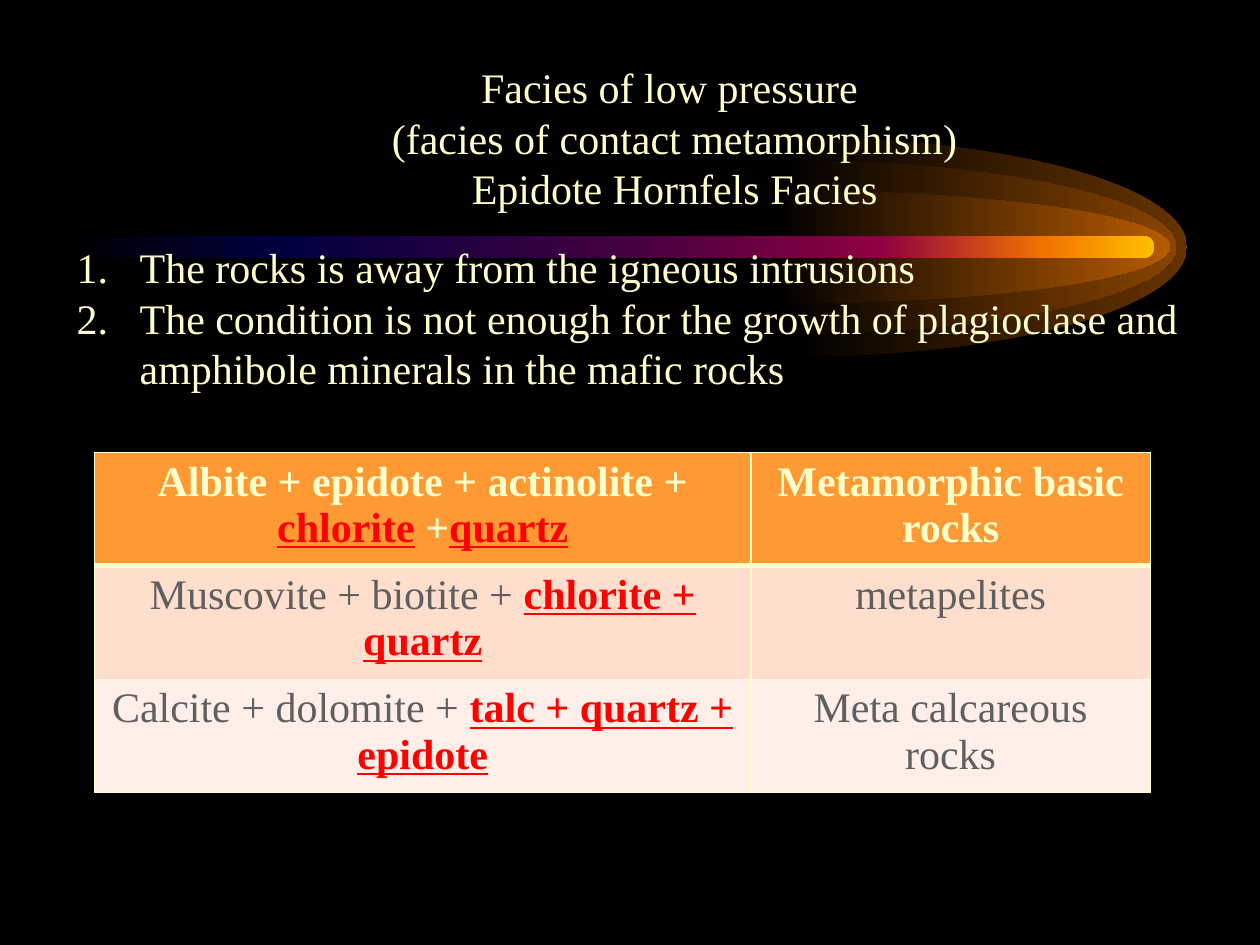
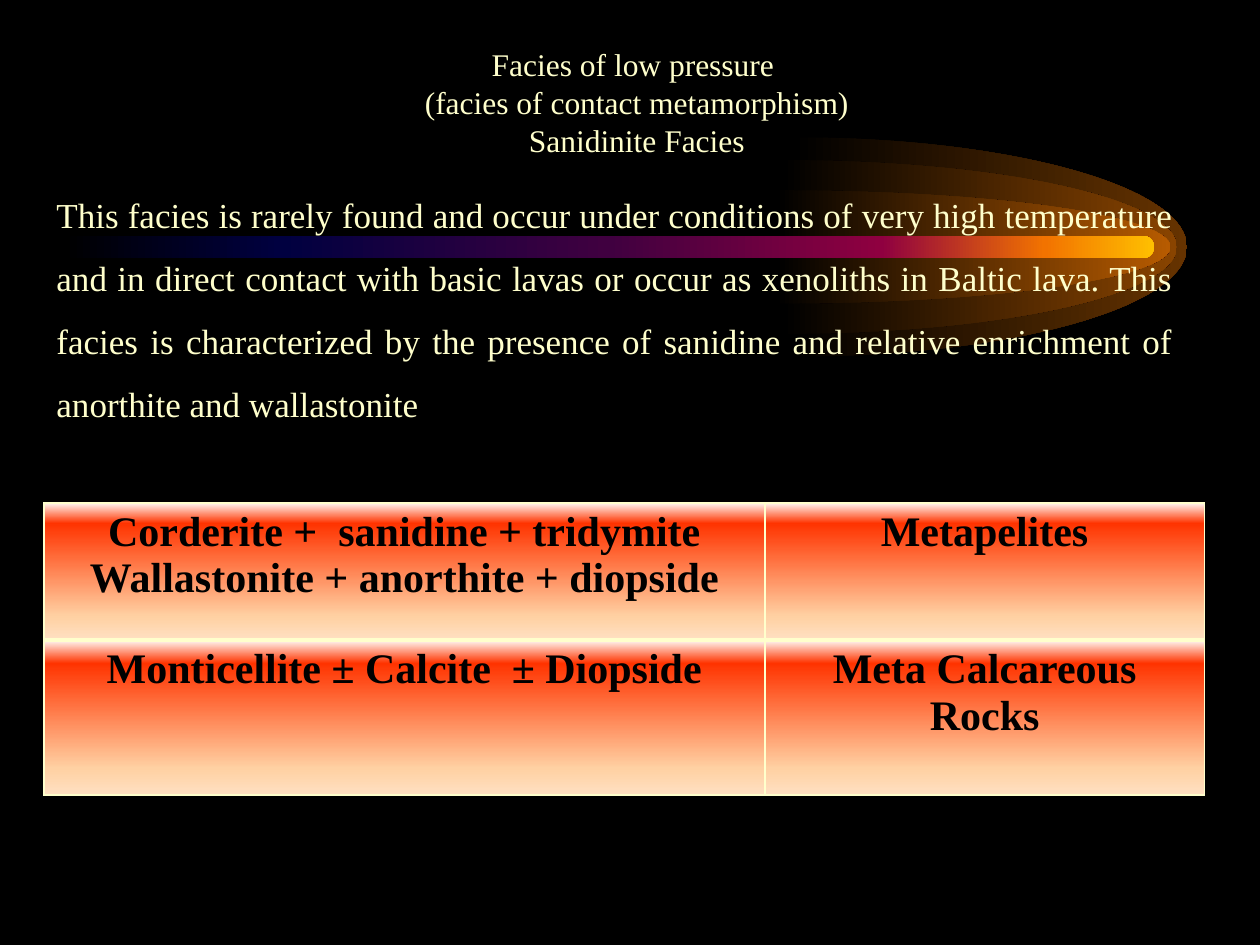
"""Build two slides on low-pressure metamorphic facies."""
import dataclasses

import pptx
import pptx.dml.color
import pptx.enum.shapes
import pptx.enum.text
import pptx.oxml.ns
import pptx.util
from lxml import etree

ALIGN = pptx.enum.text.PP_ALIGN
qn = pptx.oxml.ns.qn


@dataclasses.dataclass(frozen=True)
class Theme:
    font: str = "Times New Roman"
    large: int = 24
    medium: int = 20
    small: int = 18
    back: str = "000000"
    cream: str = "FFFFCC"
    dark: str = "000000"
    grey: str = "5F5F5F"
    accent: str = "FF0000"
    header: str = "FF9933"
    bands: tuple = ("FFDECE", "FFEFE8")
    bar: tuple = ((0, "000000"), (20, "000040"), (50, "400040"),
                  (75, "8F0040"), (90, "F27300"), (100, "FFBF00"))
    fire: tuple = ((0, "FFFAF5"), (15, "FF3300"), (83, "FFD1A3"), (100, "FFE0C2"))
    halos: tuple = ((629, 87, "663300"), (621, 69, "894400"), (616, 45, "B75B00"))


def px(n):
    return pptx.util.Emu(round(n * 9144))


def rgb(color):
    return pptx.dml.color.RGBColor.from_string(color)


def write(tf, text, *, font, size, color, accent=None, bold=False,
          align=ALIGN.LEFT, spacing=None, numbered=False):
    for i, line in enumerate(text.split("\n")):
        p = tf.paragraphs[0] if i == 0 else tf.add_paragraph()
        p.alignment = align
        if spacing:
            p.line_spacing = spacing
        if numbered:
            pPr = p._p.get_or_add_pPr()
            pPr.set("marL", str(px(50)))
            pPr.set("indent", str(px(-50)))
            etree.SubElement(pPr, qn("a:buAutoNum"), type="arabicPeriod")
        for j, part in enumerate(line.split("*")):
            if not part:
                continue
            marked = j % 2 == 1
            r = p.add_run()
            r.text = part
            r.font.name = font
            r.font.size = pptx.util.Pt(size)
            r.font.bold = bold or marked
            r.font.underline = marked
            r.font.color.rgb = rgb(accent if marked else color)


def paint(fill, props, color, angle=0):
    if isinstance(color, str):
        fill.solid()
        fill.fore_color.rgb = rgb(color)
        return
    fill.gradient()
    fill.gradient_angle = angle
    stops = props.find(qn("a:gradFill")).find(qn("a:gsLst"))
    for gs in list(stops):
        stops.remove(gs)
    for pos, value in color:
        gs = etree.SubElement(stops, qn("a:gs"), pos=str(pos * 1000))
        etree.SubElement(gs, qn("a:srgbClr"), val=value)


def curve(sp):
    """Turn each three line segments of a freeform into one Bezier curve."""
    lines = list(sp._element.iter(qn("a:lnTo")))
    for i in range(0, len(lines), 3):
        bezier = etree.Element(qn("a:cubicBezTo"))
        lines[i].addprevious(bezier)
        for line in lines[i:i + 3]:
            bezier.append(line[0])
            line.getparent().remove(line)


class Deck:
    def __init__(self, theme):
        self.theme = theme
        self.prs = pptx.Presentation()
        self.prs.slide_width, self.prs.slide_height = px(1000), px(750)
        paint(self.prs.slide_master.background.fill, None, theme.back)

    def slide(self):
        self.s = self.prs.slides.add_slide(self.prs.slide_layouts[6])
        for x, ry, color in self.theme.halos:
            self.halo(x, 196, 313, ry, color)
        self.bar(50, 187, 866, 18)

    def finish(self, sp, stops):
        sp.shadow.inherit = False
        sp.line.fill.background()
        paint(sp.fill, sp._element.spPr, stops)

    def halo(self, x, y, rx, ry, color):
        k = 0.55
        unit = [(0, -1), (k, -1), (1, -k), (1, 0), (1, k), (k, 1), (0, 1)]
        points = [(px(x + rx * u), px(y + ry * v)) for u, v in unit]
        fb = self.s.shapes.build_freeform(*points[0])
        fb.add_line_segments(points[1:], close=True)
        sp = fb.convert_to_shape()
        curve(sp)
        self.finish(sp, ((0, self.theme.back), (100, color)))

    def bar(self, x, y, w, h):
        kind = pptx.enum.shapes.MSO_SHAPE.ROUNDED_RECTANGLE
        sp = self.s.shapes.add_shape(kind, px(x), px(y), px(w), px(h))
        sp.adjustments[0] = 0.5
        self.finish(sp, self.theme.bar)

    def text(self, x, y, w, h, text, **style):
        tf = self.s.shapes.add_textbox(px(x), px(y), px(w), px(h)).text_frame
        tf.word_wrap = True
        write(tf, text, font=self.theme.font, color=self.theme.cream, **style)

    def title(self, x, y, w, h, name, size):
        lines = "Facies of low pressure \n(facies of contact metamorphism)\n" + name
        self.text(x, y, w, h, lines, size=size, align=ALIGN.CENTER)

    def borders(self, tcPr, row):
        widths = {"L": 1, "R": 1, "T": 3 if row == 1 else 1, "B": 3 if row == 0 else 1}
        for side, width in widths.items():
            ln = etree.SubElement(tcPr, qn("a:ln" + side), w=str(pptx.util.Pt(width)))
            fill = etree.SubElement(ln, qn("a:solidFill"))
            etree.SubElement(fill, qn("a:srgbClr"), val=self.theme.cream)

    def table(self, x, y, cols, heights, rows, looks):
        """Draw rows of text; each look is a (fill, text colour, bold) triple."""
        tbl = self.s.shapes.add_table(len(rows), len(cols), px(x), px(y),
                                      px(sum(cols)), px(sum(heights))).table
        tbl.first_row = tbl.horz_banding = False
        for col, w in zip(tbl.columns, cols):
            col.width = px(w)
        for i, (texts, h, (fill, color, bold)) in enumerate(zip(rows, heights, looks)):
            tbl.rows[i].height = px(h)
            for j, text in enumerate(texts):
                cell = tbl.cell(i, j)
                tcPr = cell._tc.get_or_add_tcPr()
                self.borders(tcPr, i)
                paint(cell.fill, tcPr, fill, 270)
                write(cell.text_frame, text, font=self.theme.font, size=self.theme.large,
                      color=color, accent=self.theme.accent, bold=bold, align=ALIGN.CENTER)


def epidote_hornfels(deck):
    t = deck.theme
    deck.slide()
    deck.title(122, 44, 827, 131, "Epidote Hornfels Facies", t.large)
    deck.text(51, 187, 898, 212,
              "The rocks is away from the igneous intrusions\n"
              "The condition is not enough for the growth of plagioclase and "
              "amphibole minerals in the mafic rocks", size=t.large, numbered=True)
    rows = [("Albite + epidote + actinolite + *chlorite* +*quartz*", "Metamorphic basic rocks"),
            ("Muscovite + biotite + *chlorite + quartz*", "metapelites"),
            ("Calcite + dolomite + *talc + quartz + epidote*", "Meta calcareous rocks")]
    looks = [(t.header, t.cream, True)] + [(band, t.grey, False) for band in t.bands]
    deck.table(75, 359, (521, 317), [89] * 3, rows, looks)


def sanidinite(deck):
    t = deck.theme
    deck.slide()
    deck.title(92, 31, 827, 101, "Sanidinite Facies", t.small)
    deck.text(35, 132, 906, 206,
              "This facies is rarely found and occur under conditions of very high "
              "temperature and in direct contact with basic lavas or occur as xenoliths in "
              "Baltic lava. This facies is characterized by the presence of sanidine and "
              "relative enrichment of anorthite and wallastonite",
              size=t.medium, align=ALIGN.JUSTIFY, spacing=1.5)
    rows = [("Corderite +  sanidine + tridymite\nWallastonite + anorthite + diopside",
             "Metapelites"),
            ("Monticellite ± Calcite  ± Diopside", "Meta Calcareous Rocks")]
    deck.table(35, 399, (572, 349), (109, 123), rows, [(t.fire, t.dark, True)] * 2)


def main():
    deck = Deck(Theme())
    epidote_hornfels(deck)
    sanidinite(deck)
    deck.prs.save("out.pptx")


if __name__ == "__main__":
    main()
